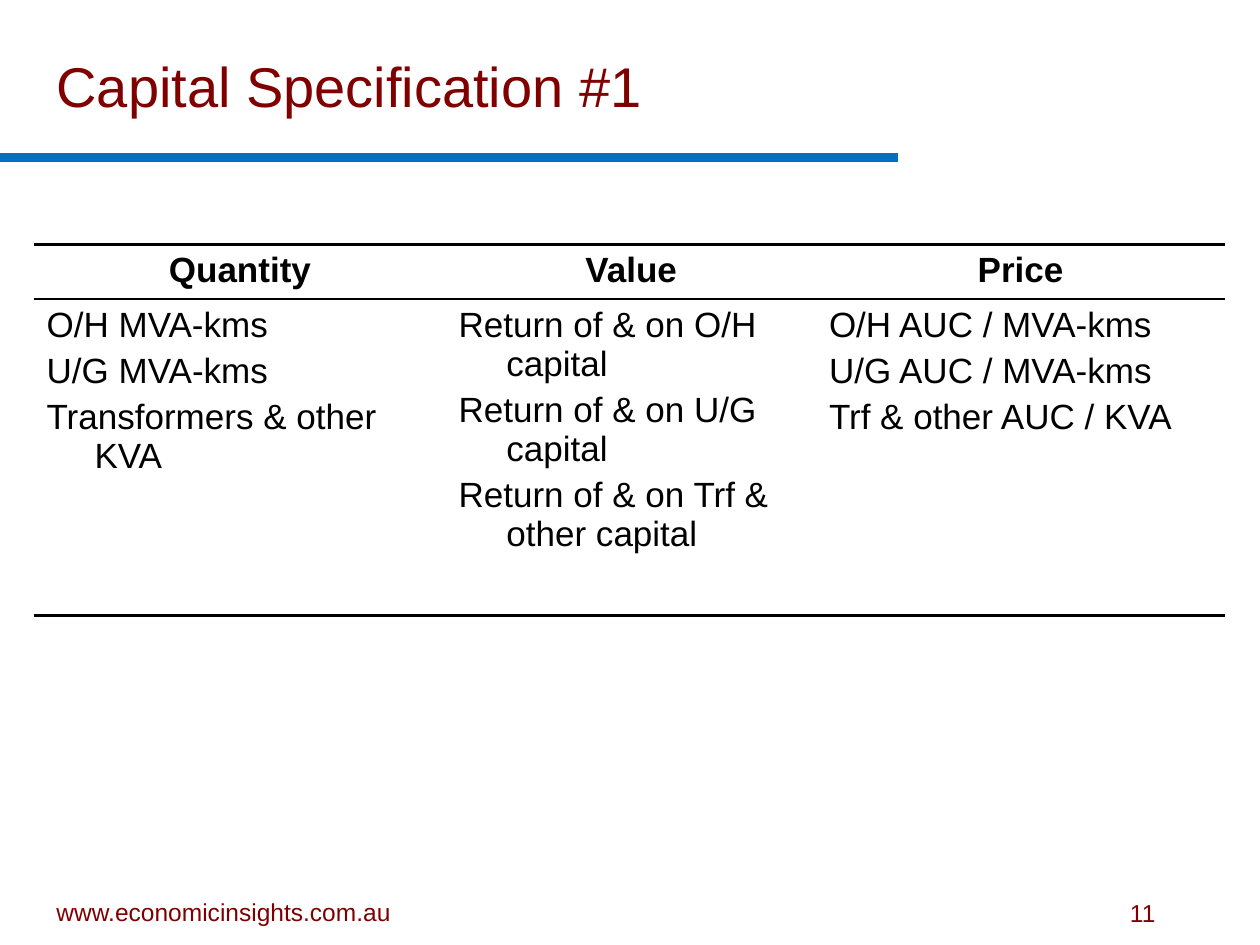
from pptx import Presentation
from pptx.dml.color import RGBColor
from pptx.enum.shapes import MSO_CONNECTOR
from pptx.enum.text import MSO_ANCHOR, PP_ALIGN
from pptx.oxml import parse_xml
from pptx.oxml.ns import nsdecls, qn
from pptx.util import Inches, Pt

MAROON = RGBColor(0x80, 0x00, 0x00)
BLUE = RGBColor(0x00, 0x70, 0xC0)
BLACK = RGBColor(0x00, 0x00, 0x00)


def format_font(font, size, color, bold=False):
    font.color.rgb = color
    values = {"name": "Arial", "size": Pt(size), "bold": bold}
    for name, value in values.items():
        setattr(font, name, value)


def add_border(cell, side, visible):
    paint = (f'<a:solidFill><a:srgbClr val="{BLACK}"/></a:solidFill>'
             if visible else "<a:noFill/>")
    cell._tc.get_or_add_tcPr().append(parse_xml(
        f'<a:ln{side} {nsdecls("a")} w="{Pt(1.5)}">{paint}</a:ln{side}>'))


prs = Presentation()
prs.slide_width, prs.slide_height = Inches(10), Inches(7.5)
s = prs.slides.add_slide(prs.slide_layouts[6])

# Blue rule under the title
rule = s.shapes.add_connector(
    MSO_CONNECTOR.STRAIGHT, Inches(0), Inches(1.25), Inches(7.13), Inches(1.25))
rule.line.color.rgb = BLUE
rule.line.width = Pt(5)
rule._element.spPr.append(rule._element.makeelement(qn("a:effectLst"), {}))

# Title, web address and page number
LABELS = [
    ("Capital Specification #1", (0.35, 0.36, 6.77, 0.63), 32,
     PP_ALIGN.LEFT, MSO_ANCHOR.BOTTOM, True),
    ("www.economicinsights.com.au", (0.2, 7.06, 3.15, 0.34), 14,
     PP_ALIGN.CENTER, MSO_ANCHOR.BOTTOM, True),
    ("11", (8.87, 7.08, 0.44, 0.33), 14,
     PP_ALIGN.LEFT, MSO_ANCHOR.TOP, False),
]
for text, box, size, align, anchor, wrap in LABELS:
    tf = s.shapes.add_textbox(*map(Inches, box)).text_frame
    tf.word_wrap = wrap
    tf.vertical_anchor = anchor
    p = tf.paragraphs[0]
    p.text = text
    p.alignment = align
    format_font(p.font, size, MAROON)

# Table: one heading and a list of entries per column
COLUMNS = [
    (3.27, "Quantity",
     ["O/H MVA-kms", "U/G MVA-kms", "Transformers & other KVA"]),
    (2.94, "Value",
     ["Return of & on O/H capital", "Return of & on U/G capital",
      "Return of & on Trf & other capital"]),
    (3.24, "Price",
     ["O/H AUC / MVA-kms", "U/G AUC / MVA-kms", "Trf & other AUC / KVA"]),
]
table = s.shapes.add_table(2, len(COLUMNS), Inches(0.27), Inches(1.94),
                           Inches(9.45), Inches(2.92)).table
table.first_row = table.horz_banding = False
for row, height in zip(table.rows, (0.41, 2.51)):
    row.height = Inches(height)

for col, (width, heading, entries) in enumerate(COLUMNS):
    table.columns[col].width = Inches(width)
    for row, lines in enumerate(([heading], entries)):
        cell = table.cell(row, col)
        for side in "LRTB":
            add_border(cell, side, side in "TB")
        cell.fill.background()
        is_heading = row == 0
        tf = cell.text_frame
        tf.text = "\n".join(lines)
        for i, p in enumerate(tf.paragraphs):
            pPr = p._p.get_or_add_pPr()
            pPr.set("marL", str(Inches(0.38)))
            pPr.set("indent", str(-Inches(0.38)))
            p.alignment = PP_ALIGN.CENTER if is_heading else PP_ALIGN.LEFT
            p.space_before = Pt(4 if i else 0)
            format_font(p.runs[0].font, 20, BLACK, is_heading)

prs.save("out.pptx")
